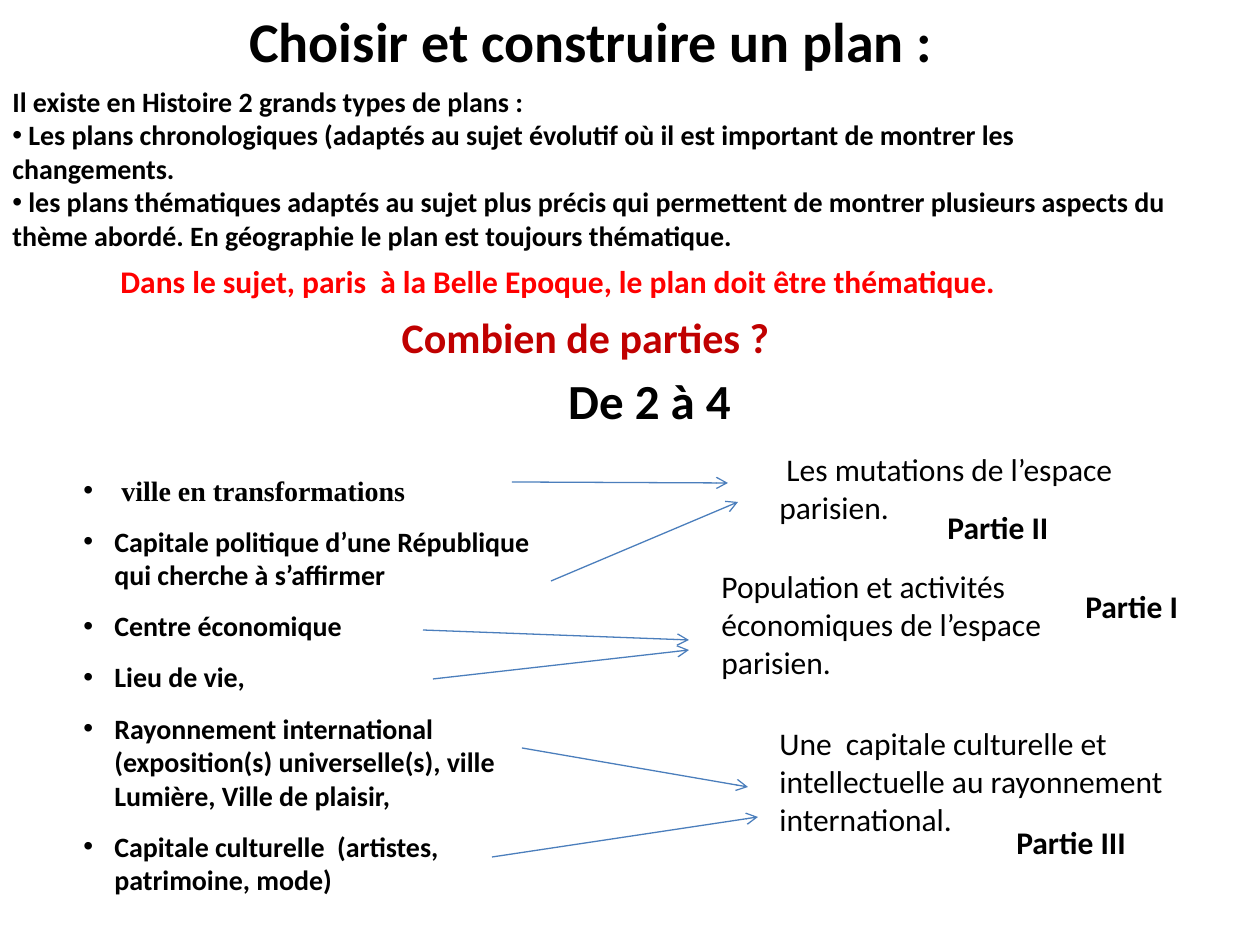
from lxml import etree
from pptx import Presentation
from pptx import util as u
from pptx.dml.color import RGBColor
from pptx.enum import shapes, text
from pptx.oxml import ns

SCALE = 914400 / 126


def px(n):
    return u.Emu(round(n * SCALE))


def color(code):
    return RGBColor.from_string(code)


def child(node, tag, **attrs):
    return etree.SubElement(node, ns.qn(tag), **attrs)


class Deck:
    font = "Calibri"
    ink = "000000"
    wire = "4B7EBC"

    def __init__(self):
        self.prs = Presentation()
        self.prs.slide_width, self.prs.slide_height = px(1260), px(945)
        self.slide = self.prs.slides.add_slide(self.prs.slide_layouts[6])

    def text(self, box, lines, size, bold=True, ink=None, center=False):
        shape = self.slide.shapes.add_textbox(*map(px, box))
        frame = shape.text_frame
        frame.word_wrap = True
        frame.text = "\n".join(lines)
        for para in frame.paragraphs:
            if center:
                para.alignment = text.PP_ALIGN.CENTER
            for run in para.runs:
                run.font.name = self.font
                run.font.size = u.Pt(size)
                run.font.bold = bold
                run.font.color.rgb = color(ink or self.ink)
        return frame.paragraphs

    def bullets(self, paras, left=0, hang=0, after=0):
        for para in paras:
            para.space_after = u.Pt(after)
            props = para._p.get_or_add_pPr()
            props.set("marL", str(px(left)))
            props.set("indent", str(-px(hang)))
            child(props, "a:buFont", typeface="Arial")
            child(props, "a:buChar", char="•")

    def arrow(self, *ends):
        line = self.slide.shapes.add_connector(
            shapes.MSO_CONNECTOR.STRAIGHT, *map(px, ends))
        line.line.color.rgb = color(self.wire)
        line.line.width = u.Pt(0.75)
        child(line.line._get_or_add_ln(), "a:tailEnd", type="arrow")
        child(line._element.spPr, "a:effectLst")

    def save(self):
        self.prs.save("out.pptx")


def main():
    deck = Deck()
    deck.text((217, 0, 748, 81), ["Choisir et construire un plan :"], 32, center=True)
    intro = deck.text((0, 78, 1191, 183), [
        "Il existe en Histoire 2 grands types de plans :",
        " Les plans chronologiques (adaptés au sujet évolutif où il est important "
        "de montrer les changements.",
        " les plans thématiques adaptés au sujet plus précis qui permettent de montrer "
        "plusieurs aspects du thème abordé. En géographie le plan est toujours thématique.",
    ], 16)
    deck.bullets(intro[1:])
    deck.text((108, 256, 1004, 50),
              ["Dans le sujet, paris  à la Belle Epoque, le plan doit être thématique."],
              18, ink="FF0000")
    deck.text((384, 305, 403, 63), ["Combien de parties ?"], 24, ink="C00000", center=True)
    deck.text((315, 364, 669, 72), ["De 2 à 4"], 28, center=True)

    themes = deck.text((39, 467, 512, 440), [
        " ville en transformations",
        "Capitale politique d’une République qui cherche à s’affirmer",
        "Centre économique",
        "Lieu de vie,",
        "Rayonnement international (exposition(s) universelle(s), ville Lumière, "
        "Ville de plaisir,",
        "Capitale culturelle  (artistes, patrimoine, mode)",
    ], 16)
    deck.bullets(themes, left=63, hang=31, after=10)
    themes[0].runs[0].font.name = "Times New Roman"

    for ends in (
        (512, 482, 728, 483),
        (522, 748, 748, 787),
        (433, 679, 689, 650),
        (423, 630, 689, 640),
        (551, 581, 738, 502),
        (492, 857, 758, 817),
    ):
        deck.arrow(*ends)

    for box, words in (
        ((767, 444, 364, 89), " Les mutations de l’espace parisien."),
        ((709, 561, 384, 127), "Population et activités économiques de l’espace parisien."),
        ((767, 718, 413, 127),
         "Une  capitale culturelle et intellectuelle au rayonnement international."),
    ):
        deck.text(box, [words], 18, bold=False)

    for box, part in (
        ((935, 502, 147, 50), "II"),
        ((1073, 581, 137, 50), "I"),
        ((1004, 817, 178, 50), "III"),
    ):
        deck.text(box, [f"Partie {part}"], 18)
    deck.save()


if __name__ == "__main__":
    main()
